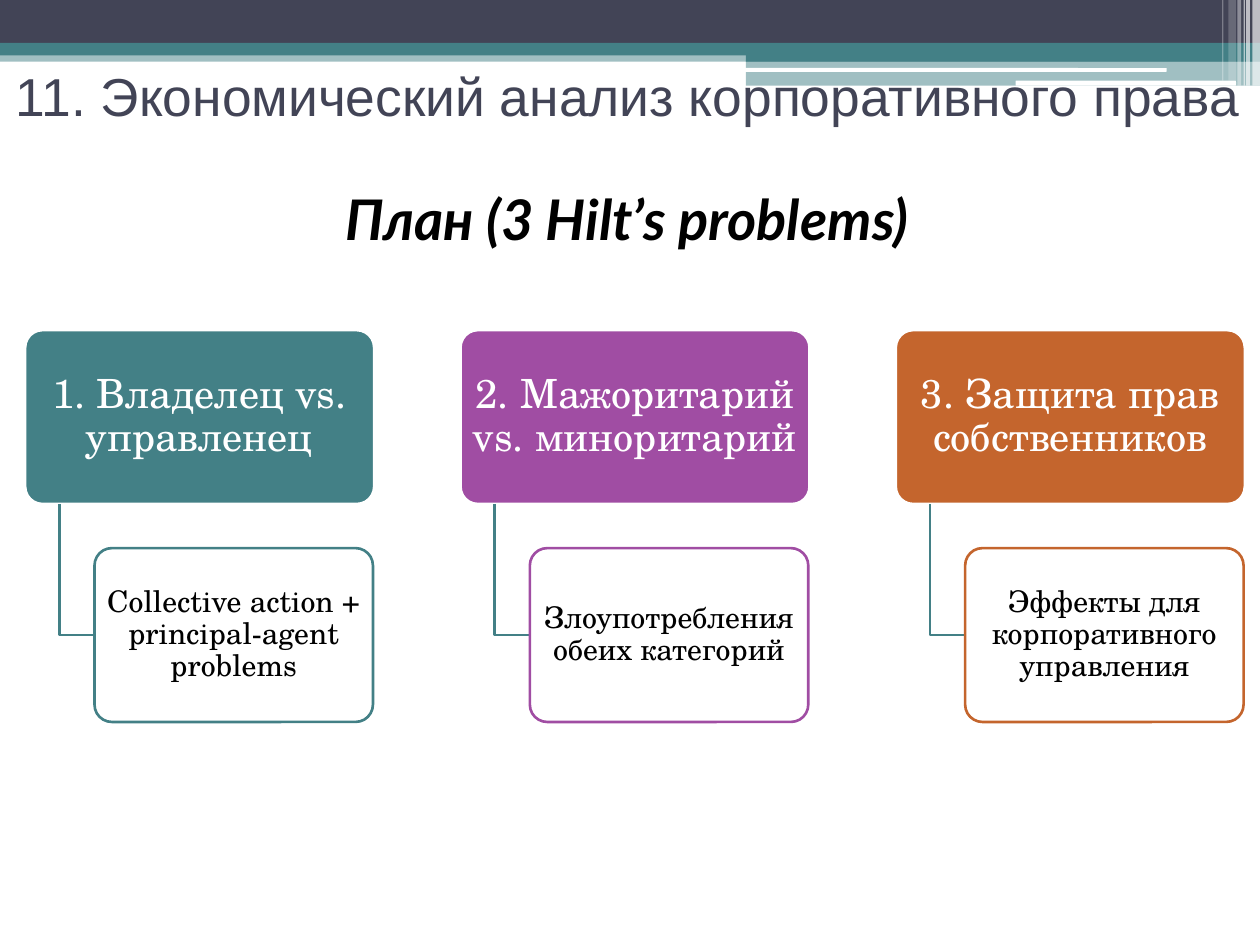
from pptx import Presentation
from pptx.dml.color import RGBColor
from pptx.enum.shapes import MSO_SHAPE
from pptx.enum.text import MSO_ANCHOR, PP_ALIGN
from pptx.oxml.ns import qn
from pptx.util import Inches, Pt
from lxml import etree

# Content
HEADING = "11. Экономический анализ корпоративного права"
TITLE = "План (3 Hilt’s problems)"
PROBLEMS = [
    ("1. Владелец vs. управленец", "Collective action + principal-agent problems", "teal"),
    ("2. Мажоритарий vs. миноритарий", "Злоупотребления обеих категорий", "purple"),
    ("3. Защита прав собственников", "Эффекты для корпоративного управления", "orange"),
]

THEME = {
    "navy": "424456", "teal": "438086", "purple": "A04DA3", "orange": "C4652D",
    "white": "FFFFFF", "black": "000000",
    "heading_font": "Arial", "title_font": "Lato", "body_font": "TeX Gyre Schola",
    "heading_size": 30.5, "title_size": 32, "problem_size": 23, "detail_size": 17,
    "line_width": 1.5,
}

# Banner: left, top, width, height, colour, opacity in percent
BANDS = [
    (0, 0.4, 10, 0.09, "teal", 50),
    (0, 0, 10, 0.34, "navy", 100),
    (0, 0.34, 10, 0.1, "teal", 100),
    (5.92, 0.39, 4.08, 0.1, "teal", 100),
    (5.92, 0.48, 4.08, 0.2, "teal", 50),
]
HIGHLIGHTS = [(5.91, 0.54, 3.35, 0.03), (8.06, 0.64, 1.75, 0.04)]
# Stripes: left, width, height, opacity in percent
STRIPES = [
    (9.94, 0.06, 0.68, 65), (9.89, 0.03, 0.68, 65), (9.87, 0.01, 0.68, 60),
    (9.82, 0.03, 0.68, 40), (9.75, 0.06, 0.64, 20), (9.7, 0.01, 0.64, 30),
]

# Diagram grid
FIRST_LEFT, COLUMN_STEP = 0.2, 3.455
PROBLEM_TOP, PROBLEM_WIDTH = 2.62, 2.77
DETAIL_TOP, DETAIL_WIDTH, DETAIL_INDENT = 4.35, 2.21, 0.55
BOX_HEIGHT = 1.38
ELBOW_INDENT = 0.27


def color(name):
    return RGBColor.from_string(THEME[name])


def style_line(shape, name):
    shape.line.color.rgb = color(name)
    shape.line.width = Pt(THEME["line_width"])


def add_box(slide, box, fill, opacity=100, line=None, rounding=None):
    kind = MSO_SHAPE.RECTANGLE if rounding is None else MSO_SHAPE.ROUNDED_RECTANGLE
    shape = slide.shapes.add_shape(kind, *map(Inches, box))
    shape.shadow.inherit = False
    if rounding is not None:
        shape.adjustments[0] = rounding
    shape.fill.solid()
    shape.fill.fore_color.rgb = color(fill)
    if opacity < 100:
        fill_color = shape.fill._xPr.find(qn("a:solidFill"))[0]
        etree.SubElement(fill_color, qn("a:alpha"), val=str(opacity * 1000))
    if line:
        style_line(shape, line)
    else:
        shape.line.fill.background()
    return shape


def write_text(shape, text, *, font, size, fill, bold=False, italic=False,
               inset=(0.1, 0.05), spacing=1.0):
    frame = shape.text_frame
    frame.word_wrap = True
    frame.vertical_anchor = MSO_ANCHOR.MIDDLE
    frame.margin_left = frame.margin_right = Inches(inset[0])
    frame.margin_top = frame.margin_bottom = Inches(inset[1])
    paragraph = frame.paragraphs[0]
    paragraph.alignment = PP_ALIGN.CENTER
    paragraph.line_spacing = spacing
    run = paragraph.add_run()
    run.text = text
    run.font.name = THEME[font]
    run.font.size = Pt(THEME[size])
    run.font.bold, run.font.italic = bold, italic
    run.font.color.rgb = color(fill)


def add_elbow(slide, left, top, right, bottom):
    builder = slide.shapes.build_freeform(Inches(left), Inches(top), scale=1.0)
    corners = [(left, bottom), (right, bottom)]
    builder.add_line_segments([(Inches(x), Inches(y)) for x, y in corners], close=False)
    elbow = builder.convert_to_shape()
    elbow.shadow.inherit = False
    elbow.fill.background()
    style_line(elbow, "teal")


def add_banner(slide):
    for *box, fill, opacity in BANDS:
        add_box(slide, box, fill, opacity)
    for box in HIGHLIGHTS:
        add_box(slide, box, "white", rounding=0.167)
    for left, width, height, opacity in STRIPES:
        add_box(slide, (left, 0, width, height), "white", opacity)


def add_problem(slide, left, problem, detail, accent):
    detail_left = left + DETAIL_INDENT
    body = {"font": "body_font", "inset": (0.01, 0.01), "spacing": 0.9}

    problem_box = add_box(slide, (left, PROBLEM_TOP, PROBLEM_WIDTH, BOX_HEIGHT),
                          accent, line="white", rounding=0.1)
    write_text(problem_box, problem, size="problem_size", fill="white", **body)

    add_elbow(slide, left + ELBOW_INDENT, PROBLEM_TOP + BOX_HEIGHT,
              detail_left, DETAIL_TOP + BOX_HEIGHT / 2)

    detail_box = add_box(slide, (detail_left, DETAIL_TOP, DETAIL_WIDTH, BOX_HEIGHT),
                         "white", 90, line=accent, rounding=0.1)
    write_text(detail_box, detail, size="detail_size", fill="black", **body)


def main():
    presentation = Presentation()
    presentation.slide_width, presentation.slide_height = Inches(10), Inches(7.5)
    slide = presentation.slides.add_slide(presentation.slide_layouts[6])

    add_banner(slide)

    # Three problems, each with its detail
    for index, problem in enumerate(PROBLEMS):
        add_problem(slide, FIRST_LEFT + index * COLUMN_STEP, *problem)

    # Title and heading
    title = slide.shapes.add_textbox(*map(Inches, (0.48, 1.15, 9, 1.17)))
    write_text(title, TITLE, font="title_font", size="title_size", fill="black",
               bold=True, italic=True)
    heading = slide.shapes.add_textbox(*map(Inches, (-0.08, 0.1, 10.12, 1.31)))
    write_text(heading, HEADING, font="heading_font", size="heading_size", fill="navy")

    presentation.save("out.pptx")


if __name__ == "__main__":
    main()
